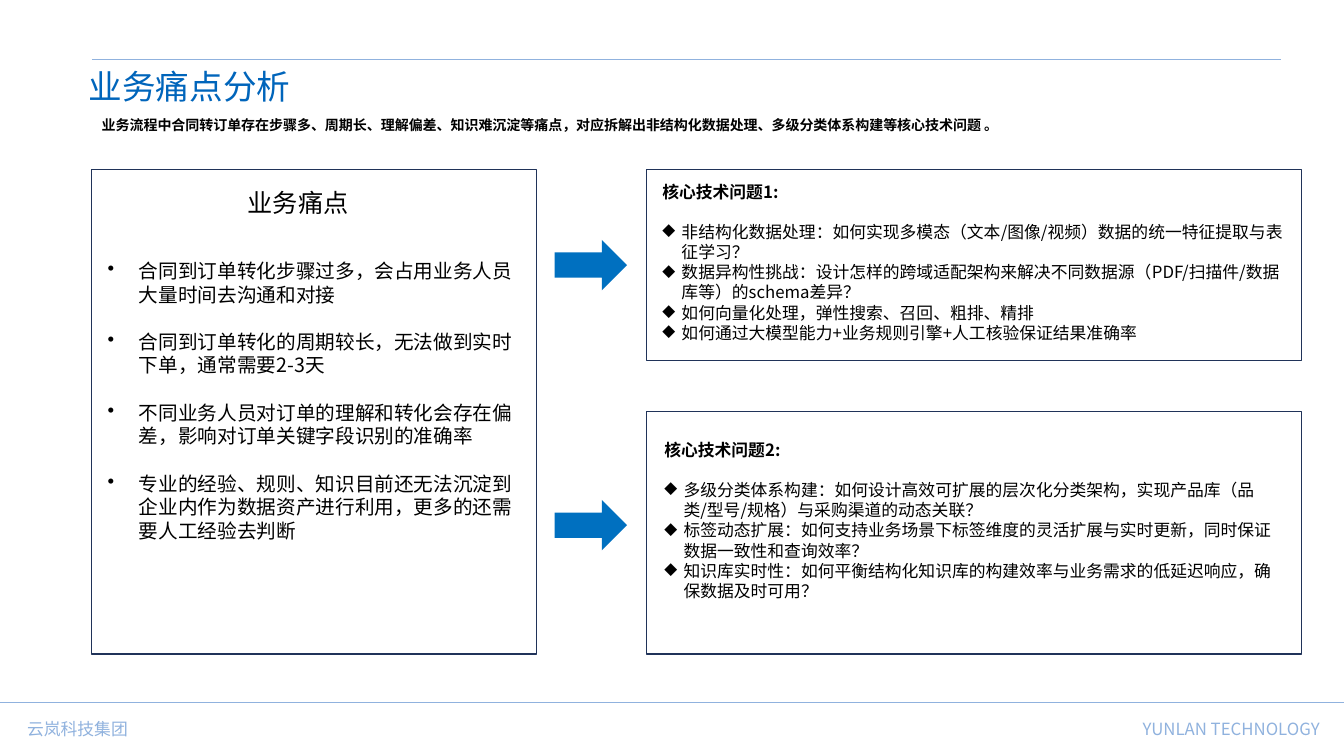
import pptx
import pptx.util
import pptx.dml.color
import pptx.enum.shapes
import pptx.enum.text
import pptx.oxml
import pptx.oxml.ns

WIDTH, HEIGHT = 13.33, 7.5
FONT = "Noto Sans CJK SC"
BLACK, TITLE_BLUE, ARROW_BLUE = "000000", "0065BB", "0070C0"
PALE_BLUE, FRAME_NAVY = "90B2DE", "203359"
SHAPES = pptx.enum.shapes.MSO_SHAPE
ALIGN = pptx.enum.text.PP_ALIGN

PAINS = [
    "合同到订单转化步骤过多，会占用业务人员大量时间去沟通和对接",
    "合同到订单转化的周期较长，无法做到实时下单，通常需要2-3天",
    "不同业务人员对订单的理解和转化会存在偏差，影响对订单关键字段识别的准确率",
    "专业的经验、规则、知识目前还无法沉淀到企业内作为数据资产进行利用，更多的还需要人工经验去判断",
]
DATA_PROBLEMS = [
    "非结构化数据处理：如何实现多模态（文本/图像/视频）数据的统一特征提取与表征学习？",
    "数据异构性挑战：设计怎样的跨域适配架构来解决不同数据源（PDF/扫描件/数据库等）的schema差异？",
    "如何向量化处理，弹性搜索、召回、粗排、精排",
    "如何通过大模型能力+业务规则引擎+人工核验保证结果准确率",
]
CATEGORY_PROBLEMS = [
    "多级分类体系构建：如何设计高效可扩展的层次化分类架构，实现产品库（品类/型号/规格）与采购渠道的动态关联？",
    "标签动态扩展：如何支持业务场景下标签维度的灵活扩展与实时更新，同时保证数据一致性和查询效率？",
    "知识库实时性：如何平衡结构化知识库的构建效率与业务需求的低延迟响应，确保数据及时可用？",
]


def color(value):
    return pptx.dml.color.RGBColor.from_string(value)


def place(box):
    """Turn a box in percent of the slide into lengths."""
    left, top, width, height = box
    across, down = WIDTH / 100, HEIGHT / 100
    return [pptx.util.Inches(length) for length in
            (left * across, top * down, width * across, height * down)]


def add_bullet(para, symbol, indent):
    properties = para._p.get_or_add_pPr()
    offset = pptx.util.Inches(indent)
    properties.set("marL", str(offset))
    properties.set("indent", str(-offset))
    bullet = pptx.oxml.parse_xml(
        f'<a:buChar {pptx.oxml.ns.nsdecls("a")} char="{symbol}"/>')
    properties.append(bullet)


def write(para, text, size, shade=BLACK, bold=False, **layout):
    span = para.add_run()
    span.text = text
    looks = {"size": pptx.util.Pt(size), "bold": bold, "name": FONT}
    for name, value in looks.items():
        setattr(span.font, name, value)
    span.font.color.rgb = color(shade)
    east_asian = pptx.oxml.parse_xml(
        f'<a:ea {pptx.oxml.ns.nsdecls("a")} typeface="{FONT}"/>')
    span.font._element.find(pptx.oxml.ns.qn("a:latin")).addnext(east_asian)
    for name, value in layout.items():
        setattr(para, name, value)


def add_text(page, box, wrap=True):
    frame = page.shapes.add_textbox(*place(box)).text_frame
    frame.word_wrap = wrap
    return frame


def add_rule(page, left, right, level):
    x1, y, span, _ = place((left, level, right - left, 0))
    rule = page.shapes.add_connector(
        pptx.enum.shapes.MSO_CONNECTOR.STRAIGHT, x1, y, x1 + span, y)
    rule.line.color.rgb = color(PALE_BLUE)
    rule.line.width = pptx.util.Pt(1)
    rule._element.spPr.append(pptx.oxml.parse_xml(
        f'<a:effectLst {pptx.oxml.ns.nsdecls("a")}/>'))


def add_frame(page, box):
    frame = page.shapes.add_shape(SHAPES.RECTANGLE, *place(box))
    frame.shadow.inherit = False
    frame.fill.background()
    frame.line.color.rgb = color(FRAME_NAVY)
    frame.line.width = pptx.util.Pt(1)


def add_arrow(page, box):
    arrow = page.shapes.add_shape(SHAPES.RIGHT_ARROW, *place(box))
    arrow.shadow.inherit = False
    arrow.fill.solid()
    arrow.fill.fore_color.rgb = color(ARROW_BLUE)
    arrow.line.fill.background()


def add_header(page, box):
    left, top, width, height = box
    add_rule(page, left, left + width, top)
    title = page.shapes.title
    position = place((left - 0.98, top + 0.13, width - 4.8, 6.67))
    for name, value in zip(("left", "top", "width", "height"), position):
        setattr(title, name, value)
    frame = title.text_frame
    settings = {"word_wrap": True,
                "vertical_anchor": pptx.enum.text.MSO_ANCHOR.TOP,
                "auto_size": pptx.enum.text.MSO_AUTO_SIZE.NONE}
    for name, value in settings.items():
        setattr(frame, name, value)
    write(frame.paragraphs[0], "业务痛点分析", 24, TITLE_BLUE,
          alignment=ALIGN.LEFT)
    summary = add_text(page, (left, top + 6.93, width, height - 6.93))
    write(summary.paragraphs[0],
          "业务流程中合同转订单存在步骤多、周期长、理解偏差、知识难沉淀等痛点，"
          "对应拆解出非结构化数据处理、多级分类体系构建等核心技术问题 。",
          10, bold=True)


def add_pain_panel(page, box):
    left, top, width, height = box
    add_frame(page, box)
    heading = add_text(page, (left + 10.87, top + 1.73, 9.08, 5.33), False)
    write(heading.paragraphs[0], "业务痛点", 18)
    frame = add_text(page, (left + 0.45, top + 11.2, width - 0.9, 43.47))
    for index, pain in enumerate(PAINS):
        para = frame.add_paragraph() if index else frame.paragraphs[0]
        add_bullet(para, "•", 0.31)
        write(para, pain, 14, space_before=pptx.util.Pt(17 if index else 0))


def add_problem_panel(page, box, inset, heading, problems):
    left, top, width, height = box
    across, down = inset
    add_frame(page, box)
    frame = add_text(page, (left + across, top + down, width - 0.9,
                            height - 2 * down))
    write(frame.paragraphs[0], heading, 12, bold=True)
    for index, problem in enumerate(problems):
        para = frame.add_paragraph()
        add_bullet(para, "◆", 0.19)
        write(para, problem, 12,
              space_before=pptx.util.Pt(0 if index else 14.4))


def add_footer(page, box):
    left, top, width, height = box
    add_rule(page, left, left + width, top)
    for start, share, text, side in (
            (1.28, 28.28, "云岚科技集团", ALIGN.LEFT),
            (77.87, 21.08, "YUNLAN TECHNOLOGY", ALIGN.RIGHT)):
        frame = add_text(page, (left + start, top + 1.47, share, 4))
        write(frame.paragraphs[0], text, 12, PALE_BLUE, alignment=side)


def main():
    deck = pptx.Presentation()
    deck.slide_width = pptx.util.Inches(WIDTH)
    deck.slide_height = pptx.util.Inches(HEIGHT)
    page = deck.slides.add_slide(deck.slide_layouts[5])

    add_footer(page, (0, 92.93, 100, 7.07))
    add_header(page, (6.83, 7.87, 88.45, 10.53))
    add_pain_panel(page, (6.83, 22.4, 33.08, 64.13))
    add_problem_panel(page, (48.09, 22.4, 48.76, 25.33), (0.45, 0.93),
                      "核心技术问题1:", DATA_PROBLEMS)
    add_problem_panel(page, (48.09, 54.4, 48.76, 32.13), (0.6, 3.07),
                      "核心技术问题2:", CATEGORY_PROBLEMS)
    for top in (31.73, 66.13):
        add_arrow(page, (41.26, top, 5.4, 6.67))
    deck.save("out.pptx")


if __name__ == "__main__":
    main()
